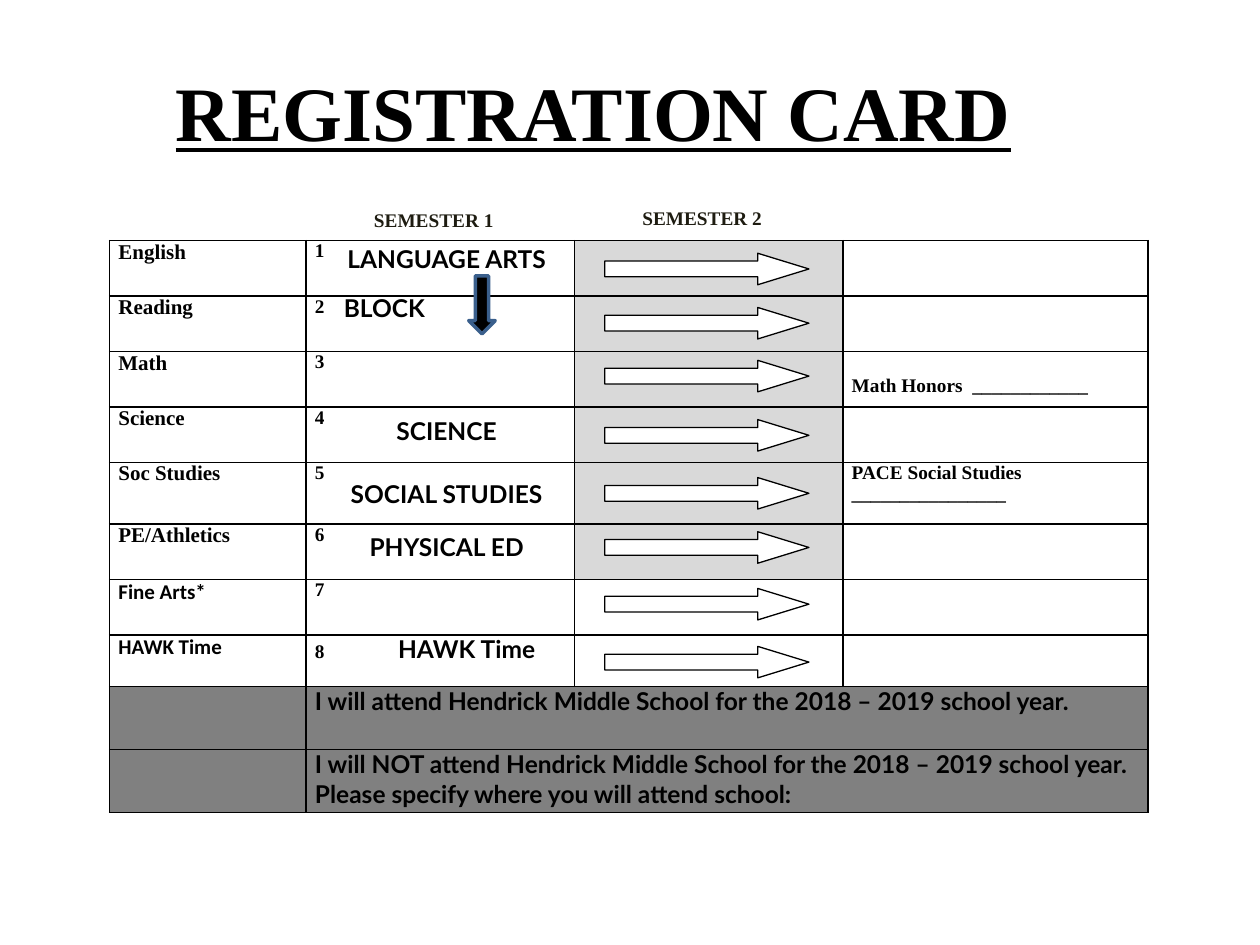
from dataclasses import dataclass

import pptx
import pptx.dml.color
import pptx.enum.shapes
import pptx.enum.text
import pptx.oxml
import pptx.oxml.ns
import pptx.util
from pptx.util import Inches

Shape = pptx.enum.shapes.MSO_SHAPE
Align = pptx.enum.text.PP_ALIGN
Anchor = pptx.enum.text.MSO_ANCHOR


@dataclass(frozen=True)
class Style:
    font: str
    size: float
    color: str = "000000"


@dataclass(frozen=True)
class Theme:
    title: Style = Style("Times New Roman", 44)
    semester: Style = Style("Times New Roman", 11, "1E1C11")
    subject: Style = Style("Times New Roman", 12)
    elective: Style = Style("Calibri", 12)
    small: Style = Style("Times New Roman", 11)
    course: Style = Style("Lato", 14)
    black: str = "000000"
    white: str = "FFFFFF"
    light: str = "D9D9D9"
    dark: str = "808080"
    blue: str = "3A5F8C"


@dataclass(frozen=True)
class Period:
    subject: str
    height: float
    arrow_top: float
    style: Style
    shaded: bool = True


@dataclass(frozen=True)
class Label:
    text: str
    left: float
    top: float
    width: float
    height: float
    style: Style
    align: Align = Align.CENTER
    wrap: bool = True


THEME = Theme()
TABLE_LEFT, TABLE_TOP = 0.87, 1.91
COLUMNS = (1.56, 2.13, 2.13, 2.42)
PERIODS = (
    Period("English", 0.44, 2.01, THEME.subject),
    Period("Reading", 0.44, 2.44, THEME.subject),
    Period("Math", 0.44, 2.86, THEME.subject),
    Period("Science", 0.44, 3.33, THEME.subject),
    Period("Soc Studies", 0.49, 3.79, THEME.subject),
    Period("PE/Athletics", 0.44, 4.22, THEME.subject),
    Period("Fine Arts*", 0.44, 4.67, THEME.elective, False),
    Period("HAWK Time", 0.41, 5.13, THEME.elective, False),
)
CHOICES = (
    ("I will attend Hendrick Middle School for the 2018 – 2019 school year.",),
    ("I will NOT attend Hendrick Middle School for the 2018 – 2019 school year.",
     "Please specify where you will attend school:"),
)
CHOICE_HEIGHT = 0.5
LABELS = (
    Label("SEMESTER 1", 2.87, 1.6, 1.17, 0.29, THEME.semester, Align.LEFT, False),
    Label("SEMESTER 2", 5, 1.59, 1.17, 0.29, THEME.semester, Align.LEFT, False),
    Label("LANGUAGE ARTS", 2.5, 1.89, 2.09, 0.34, THEME.course),
    Label("BLOCK", 2.63, 2.28, 1.95, 0.34, THEME.course, Align.LEFT),
    Label("SCIENCE", 2.5, 3.25, 2.09, 0.34, THEME.course),
    Label("SOCIAL STUDIES", 2.5, 3.75, 2.09, 0.34, THEME.course),
    Label("PHYSICAL ED", 2.5, 4.17, 2.09, 0.34, THEME.course),
)


def rgb(color: str) -> pptx.dml.color.RGBColor:
    return pptx.dml.color.RGBColor.from_string(color)


def set_font(font, style: Style) -> None:
    font.name = style.font
    font.size = pptx.util.Pt(style.size)
    font.bold = True
    font.color.rgb = rgb(style.color)


def write(tf, lines: tuple[str, ...], style: Style, align: Align = Align.LEFT) -> None:
    for i, line in enumerate(lines):
        p = tf.paragraphs[0] if i == 0 else tf.add_paragraph()
        p.text = line
        p.alignment = align
        set_font(p.font, style)


def format_cell(cell, fill: str | None = None) -> None:
    """Set margins, fill and a thin black border on all four sides."""
    cell.margin_left = cell.margin_right = Inches(0.07)
    cell.margin_top = cell.margin_bottom = 0
    if fill:
        cell.fill.solid()
        cell.fill.fore_color.rgb = rgb(fill)
    else:
        cell.fill.background()
    tc_pr = cell._tc.get_or_add_tcPr()
    for i, side in enumerate(("lnL", "lnR", "lnT", "lnB")):
        tc_pr.insert(i, pptx.oxml.parse_xml(
            f'<a:{side} {pptx.oxml.ns.nsdecls("a")} w="12700"><a:solidFill>'
            f'<a:srgbClr val="{THEME.black}"/></a:solidFill></a:{side}>'))


def add_hawk_time(cell) -> None:
    """Put the course name after the period number, at a tab stop."""
    p = cell.text_frame.paragraphs[0]
    p._p.get_or_add_pPr().insert(0, pptx.oxml.parse_xml(
        f'<a:tabLst {pptx.oxml.ns.nsdecls("a")}>'
        f'<a:tab pos="{Inches(0.66)}" algn="l"/></a:tabLst>'))
    r = p.add_run()
    r.text = "\tHAWK Time"
    set_font(r.font, THEME.course)


def add_schedule(slide) -> None:
    heights = [period.height for period in PERIODS] + [CHOICE_HEIGHT] * len(CHOICES)
    table = slide.shapes.add_table(
        len(heights), len(COLUMNS), Inches(TABLE_LEFT), Inches(TABLE_TOP),
        Inches(sum(COLUMNS)), Inches(sum(heights))).table
    table.first_row = table.horz_banding = False
    for column, width in zip(table.columns, COLUMNS):
        column.width = Inches(width)
    for row, height in zip(table.rows, heights):
        row.height = Inches(height)

    for i, period in enumerate(PERIODS):
        for j in range(len(COLUMNS)):
            shaded = j == 2 and period.shaded
            format_cell(table.cell(i, j), THEME.light if shaded else None)
        write(table.cell(i, 0).text_frame, (period.subject,), period.style)
        write(table.cell(i, 1).text_frame, (str(i + 1),), THEME.small)
    add_hawk_time(table.cell(len(PERIODS) - 1, 1))

    honors = table.cell(2, 3)
    write(honors.text_frame, ("Math Honors  ____________",), THEME.small)
    honors.vertical_anchor = Anchor.BOTTOM
    honors.margin_bottom = Inches(0.08)
    write(table.cell(4, 3).text_frame,
          ("PACE Social Studies", "________________"), THEME.small)

    for i, lines in enumerate(CHOICES, len(PERIODS)):
        for j in range(len(COLUMNS)):
            format_cell(table.cell(i, j), THEME.dark)
        table.cell(i, 1).merge(table.cell(i, 3))
        write(table.cell(i, 1).text_frame, lines, THEME.course)


def add_arrow(slide, kind: Shape, left: float, top: float, width: float,
              height: float, fill: str, line: str, weight: float):
    sp = slide.shapes.add_shape(
        kind, Inches(left), Inches(top), Inches(width), Inches(height))
    sp.shadow.inherit = False
    sp.fill.solid()
    sp.fill.fore_color.rgb = rgb(fill)
    sp.line.color.rgb = rgb(line)
    sp.line.width = pptx.util.Pt(weight)
    return sp


def add_label(slide, label: Label) -> None:
    tf = slide.shapes.add_textbox(
        Inches(label.left), Inches(label.top),
        Inches(label.width), Inches(label.height)).text_frame
    tf.word_wrap = label.wrap
    tf.auto_size = pptx.enum.text.MSO_AUTO_SIZE.SHAPE_TO_FIT_TEXT
    write(tf, (label.text,), label.style, label.align)


def add_title(slide) -> None:
    title = slide.shapes.title
    title.left, title.top = Inches(0), Inches(0.42)
    title.width, title.height = Inches(9.42), Inches(0.92)
    title.text_frame.vertical_anchor = Anchor.MIDDLE
    write(title.text_frame, ("REGISTRATION CARD",), THEME.title, Align.CENTER)
    title.text_frame.paragraphs[0].font.underline = True


def main() -> None:
    prs = pptx.Presentation()
    prs.slide_width, prs.slide_height = Inches(10), Inches(7.5)
    slide = prs.slides.add_slide(prs.slide_layouts[5])
    add_title(slide)
    add_schedule(slide)
    for period in PERIODS:
        arrow = add_arrow(slide, Shape.RIGHT_ARROW, 4.8, period.arrow_top, 1.62, 0.25,
                          THEME.white, THEME.black, 0.75)
        arrow.adjustments[1] = 1.625
    for label in LABELS:
        add_label(slide, label)
    add_arrow(slide, Shape.DOWN_ARROW, 3.72, 2.19, 0.21, 0.46,
              THEME.black, THEME.blue, 2)
    prs.save("out.pptx")


if __name__ == "__main__":
    main()
